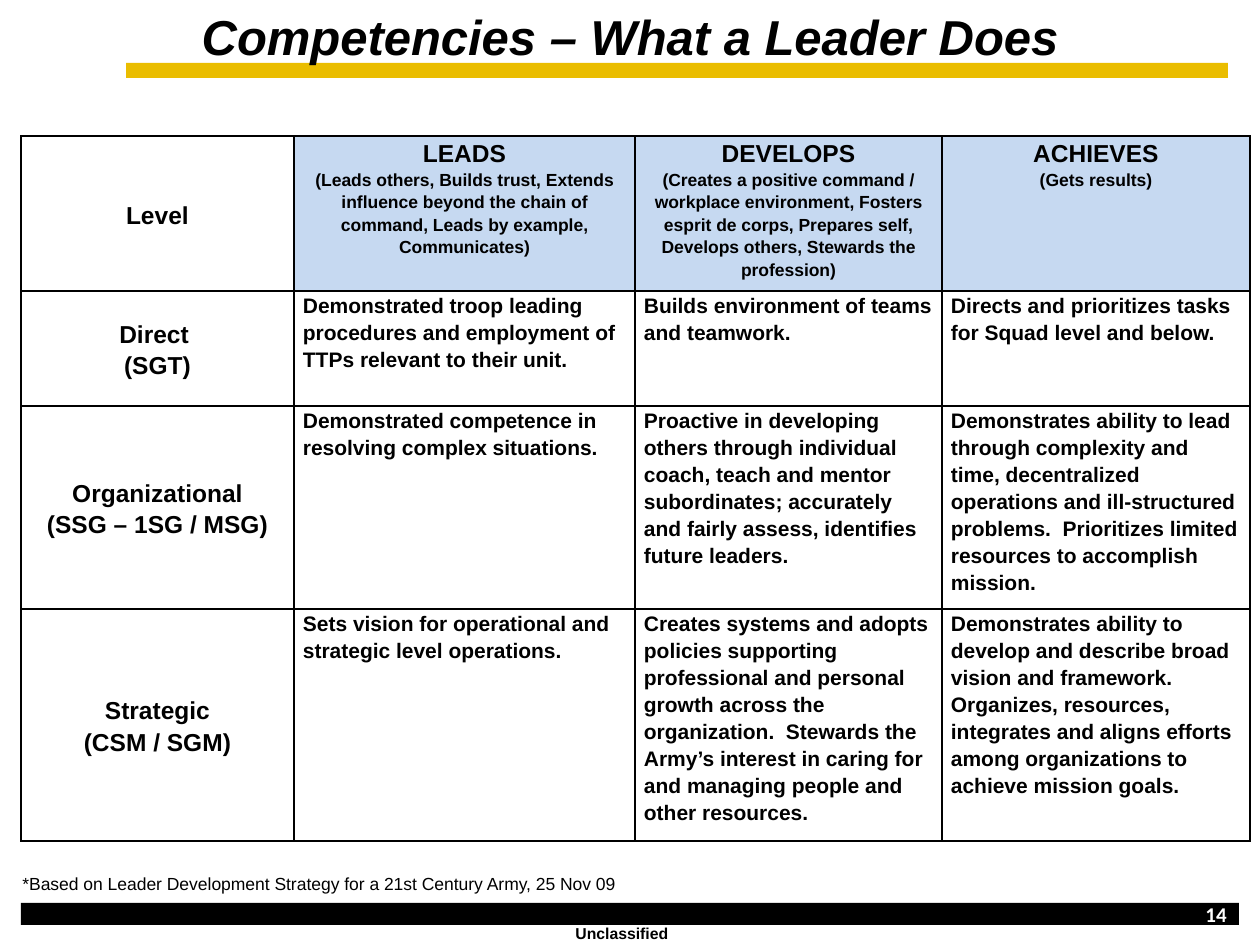
from lxml import etree
from pptx import Presentation
from pptx.dml.color import RGBColor
from pptx.enum.shapes import MSO_SHAPE
from pptx.enum.text import MSO_ANCHOR, PP_ALIGN
from pptx.oxml.ns import qn
from pptx.util import Emu, Pt

RECTANGLE = MSO_SHAPE.RECTANGLE
LEFT, CENTER, RIGHT = PP_ALIGN.LEFT, PP_ALIGN.CENTER, PP_ALIGN.RIGHT
TOP, MIDDLE = MSO_ANCHOR.TOP, MSO_ANCHOR.MIDDLE

BLACK, WHITE, GOLD, PALE_BLUE = "000000", "FFFFFF", "EABD00", "C6D9F1"
PAGE_WIDTH, PAGE_HEIGHT = 1260, 945

COLUMN_WIDTHS = [273, 341, 307, 308]
ROW_HEIGHTS = [155, 115, 203, 232]
HEADINGS = [
    ("LEADS", "(Leads others, Builds trust, Extends influence beyond the chain of "
              "command, Leads by example, Communicates)"),
    ("DEVELOPS", "(Creates a positive command / workplace environment, Fosters esprit "
                 "de corps, Prepares self, Develops others, Stewards the profession)"),
    ("ACHIEVES", "(Gets results)"),
]
LEVELS = [
    (["Direct ", "(SGT)"], [
        "Demonstrated troop leading procedures and employment of TTPs relevant to "
        "their unit.",
        "Builds environment of teams and teamwork.",
        "Directs and prioritizes tasks for Squad level and below.",
    ]),
    (["Organizational", "(SSG – 1SG / MSG)"], [
        "Demonstrated competence in resolving complex situations.",
        "Proactive in developing others through individual coach, teach and mentor "
        "subordinates; accurately and fairly assess, identifies future leaders.",
        "Demonstrates ability to lead through complexity and time, decentralized "
        "operations and ill-structured problems.  Prioritizes limited resources to "
        "accomplish mission.",
    ]),
    (["Strategic", "(CSM / SGM)"], [
        "Sets vision for operational and strategic level operations.",
        "Creates systems and adopts policies supporting professional and personal "
        "growth across the organization.  Stewards the Army’s interest in caring for "
        "and managing people and other resources.",
        "Demonstrates ability to develop and describe broad vision and framework.  "
        "Organizes, resources, integrates and aligns efforts among organizations to "
        "achieve mission goals.",
    ]),
]


def px(length):
    return Emu(round(length * 914400 / 126))


def color(value):
    return RGBColor.from_string(value)


def add_span(para, text, size, bold=True, italic=False, ink=BLACK, font="Arial"):
    span = para.add_run()
    span.text = text
    span.font.name = font
    span.font.size = Pt(size)
    span.font.bold = bold
    span.font.italic = italic
    span.font.color.rgb = color(ink)


def add_bar(page, left, top, width, height, fill):
    bar = page.shapes.add_shape(RECTANGLE, px(left), px(top), px(width), px(height))
    bar.shadow.inherit = False
    bar.fill.solid()
    bar.fill.fore_color.rgb = color(fill)
    bar.line.fill.background()


def add_label(page, left, top, width, height, text, size, align=LEFT, anchor=TOP,
              wrap=True, **style):
    box = page.shapes.add_textbox(px(left), px(top), px(width), px(height))
    frame = box.text_frame
    frame.word_wrap = wrap
    frame.vertical_anchor = anchor
    para = frame.paragraphs[0]
    para.alignment = align
    add_span(para, text, size, **style)


def add_borders(cell):
    properties = cell._tc.get_or_add_tcPr()
    for side in ("lnL", "lnR", "lnT", "lnB"):
        line = etree.SubElement(properties, qn(f"a:{side}"), w=str(Pt(1)))
        fill = etree.SubElement(line, qn("a:solidFill"))
        etree.SubElement(fill, qn("a:srgbClr"), val=BLACK)


def fill_cell(cell, lines, align=LEFT, anchor=TOP, fill=None):
    """Write (text, size) lines into a bordered cell."""
    add_borders(cell)
    if fill:
        cell.fill.solid()
        cell.fill.fore_color.rgb = color(fill)
    else:
        cell.fill.background()
    cell.margin_left = cell.margin_right = px(9)
    cell.margin_top = cell.margin_bottom = 0
    cell.vertical_anchor = anchor
    frame = cell.text_frame
    for index, (text, size) in enumerate(lines):
        para = frame.add_paragraph() if index else frame.paragraphs[0]
        para.alignment = align
        para.line_spacing = 1.15
        add_span(para, text, size)


def add_competency_table(page, left, top):
    table = page.shapes.add_table(
        len(ROW_HEIGHTS), len(COLUMN_WIDTHS), px(left), px(top),
        px(sum(COLUMN_WIDTHS)), px(sum(ROW_HEIGHTS))).table
    table.first_row = table.horz_banding = False
    for column, width in zip(table.columns, COLUMN_WIDTHS):
        column.width = px(width)
    for row, height in zip(table.rows, ROW_HEIGHTS):
        row.height = px(height)

    fill_cell(table.cell(0, 0), [("Level", 14)], CENTER, MIDDLE)
    for column, (heading, detail) in enumerate(HEADINGS, 1):
        fill_cell(table.cell(0, column), [(heading, 14), (detail, 10)], CENTER,
                  fill=PALE_BLUE)
    for row, (names, descriptions) in enumerate(LEVELS, 1):
        fill_cell(table.cell(row, 0), [(name, 14) for name in names], CENTER, MIDDLE)
        for column, description in enumerate(descriptions, 1):
            fill_cell(table.cell(row, column), [(description, 12)])


def add_header(page, left, top, width):
    add_bar(page, left + 126, top + 63, 1102, 15, GOLD)
    add_label(page, left, top, width, 63, "Competencies – What a Leader Does", 28,
              CENTER, italic=True)


def add_footer(page, left, top):
    add_label(page, left - 11, top - 36, 693, 34,
              "*Based on Leader Development Strategy for a 21st Century Army, 25 Nov 09",
              10, bold=False)
    add_bar(page, left, top, 1218, 22, BLACK)
    add_label(page, left + 924, top - 15, 294, 53, "14", 12, RIGHT, MIDDLE,
              ink=WHITE, font="Calibri")
    add_label(page, left + 542, top + 15, 122, 32, "Unclassified", 9, wrap=False)


def main():
    deck = Presentation()
    deck.slide_width, deck.slide_height = px(PAGE_WIDTH), px(PAGE_HEIGHT)
    page = deck.slides.add_slide(deck.slide_layouts[6])
    add_header(page, 0, 0, PAGE_WIDTH)
    add_competency_table(page, 21, 136)
    add_footer(page, 21, 903)
    deck.save("out.pptx")


if __name__ == "__main__":
    main()
